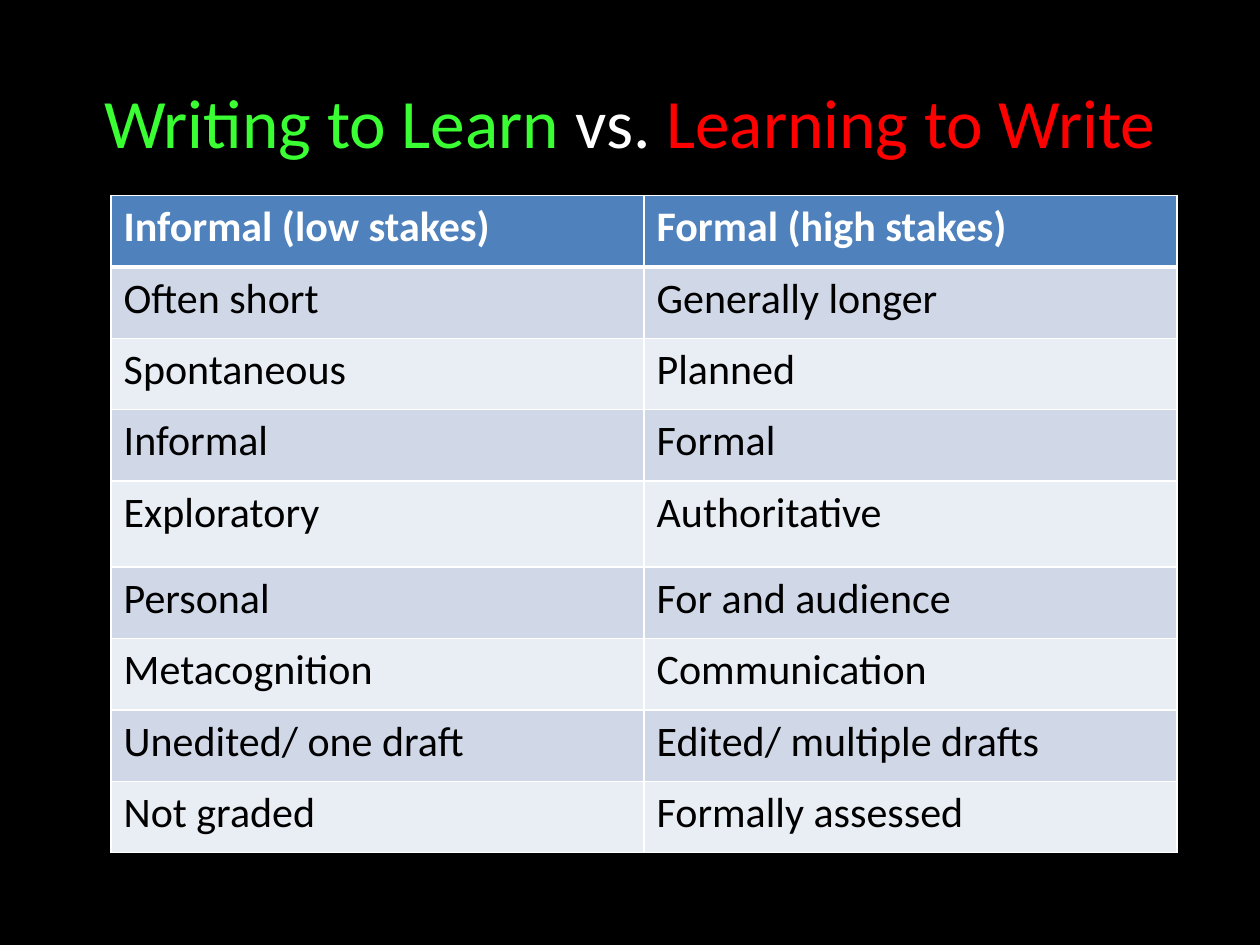
from typing import NamedTuple

from lxml import etree
from pptx import Presentation
from pptx import util as u
from pptx.dml.color import RGBColor
from pptx.enum import text
from pptx.oxml import ns

FONT = "Calibri"
WHITE = "FFFFFF"


class Part(NamedTuple):
    words: str
    tint: str
    size: float
    bold: bool = False


class Row(NamedTuple):
    left: str
    right: str
    high: float = 1.44


TITLE = [
    Part("Writing to Learn ", "3AFF33", 39.6),
    Part("vs. ", WHITE, 39.6),
    Part("Learning to Write", "FF0000", 39.6),
]
ROWS = [
    Row("Informal (low stakes)", "Formal (high stakes)"),
    Row("Often short", "Generally longer"),
    Row("Spontaneous", "Planned"),
    Row("Informal", "Formal"),
    Row("Exploratory", "Authoritative", 1.73),
    Row("Personal", "For and audience"),
    Row("Metacognition", "Communication"),
    Row("Unedited/ one draft", "Edited/ multiple drafts"),
    Row("Not graded", "Formally assessed"),
]


def paint(item, tint: str) -> None:
    item.solid()
    item.fore_color.rgb = RGBColor.from_string(tint)


def write(para, part: Part) -> None:
    run = para.add_run()
    run.text = part.words
    run.font.name = FONT
    run.font.size = u.Pt(part.size)
    run.font.bold = part.bold
    paint(run.font.fill, part.tint)


def edge(cell, side: str, width: float) -> None:
    props = cell._tc.get_or_add_tcPr()
    line = etree.SubElement(props, ns.qn(f"a:ln{side}"), w=str(u.Pt(width)))
    fill = etree.SubElement(line, ns.qn("a:solidFill"))
    etree.SubElement(fill, ns.qn("a:srgbClr"), val=WHITE)


def draw_title(slide) -> None:
    box = slide.shapes.add_textbox(u.Cm(1.27), u.Cm(0.76), u.Cm(22.86), u.Cm(3.18))
    frame = box.text_frame
    frame.word_wrap = True
    frame.vertical_anchor = text.MSO_ANCHOR.MIDDLE
    frame.margin_top = u.Cm(0.3)
    para = frame.paragraphs[0]
    para.alignment = text.PP_ALIGN.CENTER
    for part in TITLE:
        write(para, part)


def draw_cell(cell, words: str, row: int) -> None:
    head = row == 0
    widths = {"L": 1, "R": 1, "T": 3 if row == 1 else 1, "B": 3 if head else 1}
    for side, width in widths.items():
        edge(cell, side, width)
    paint(cell.fill, "4F81BD" if head else "D0D8E8" if row % 2 else "E9EDF4")
    write(cell.text_frame.paragraphs[0],
          Part(words, WHITE if head else "000000", 24, head))


def draw_table(slide) -> None:
    high = sum(row.high for row in ROWS)
    grid = slide.shapes.add_table(
        len(ROWS), 2, u.Cm(2.24), u.Cm(3.94), u.Cm(21.49), u.Cm(high)).table
    for num, row in enumerate(ROWS):
        grid.rows[num].height = u.Cm(row.high)
        for col, words in enumerate((row.left, row.right)):
            draw_cell(grid.cell(num, col), words, num)


def main() -> None:
    deck = Presentation()
    deck.slide_width, deck.slide_height = u.Cm(25.4), u.Cm(19.05)
    slide = deck.slides.add_slide(deck.slide_layouts[6])
    paint(slide.background.fill, "000000")
    draw_title(slide)
    draw_table(slide)
    deck.save("out.pptx")


if __name__ == "__main__":
    main()
